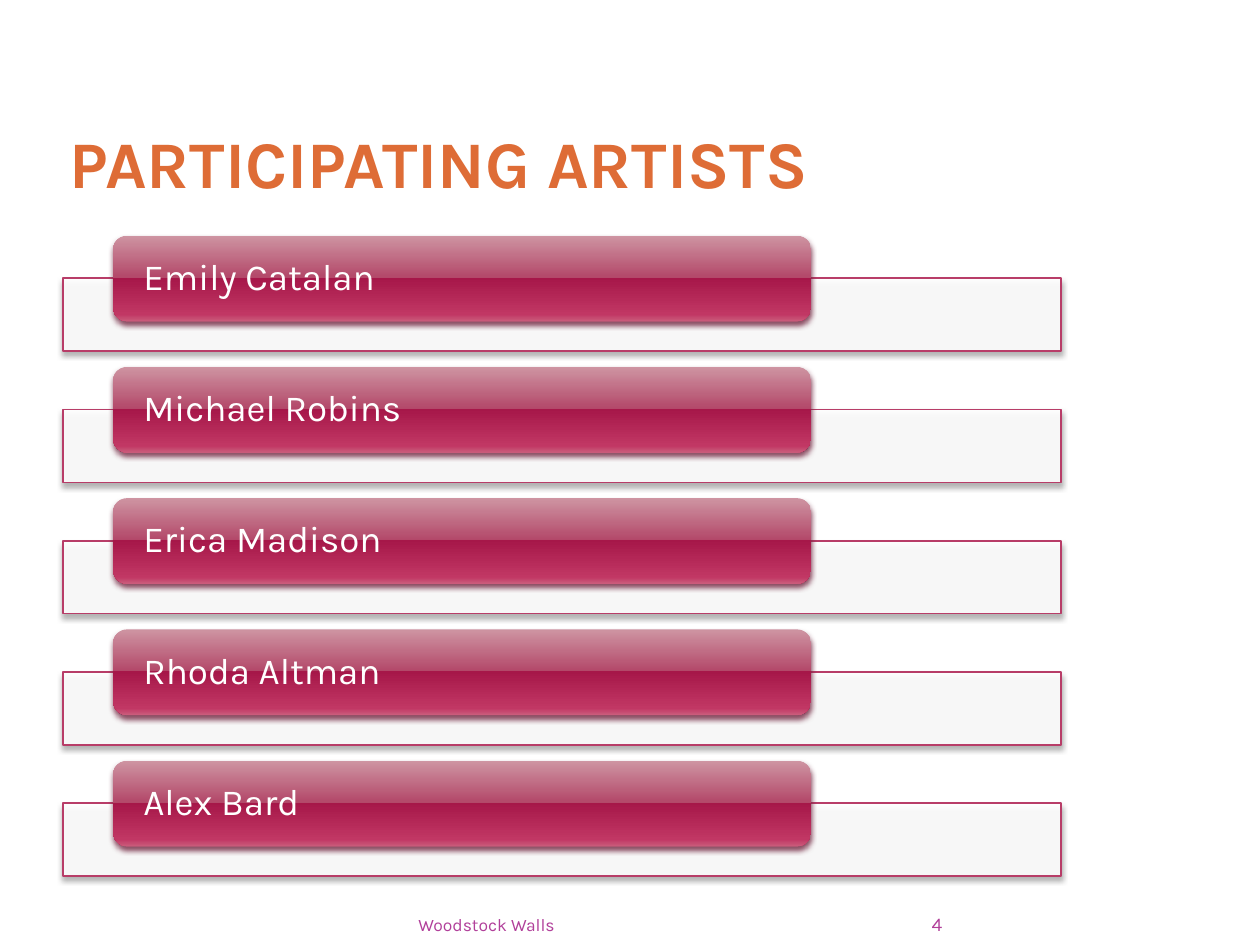
import pptx
import pptx.util
import pptx.dml.color
import pptx.enum.shapes
import pptx.enum.text
import pptx.oxml
import pptx.oxml.ns

Cm, Pt = pptx.util.Cm, pptx.util.Pt
MSO_SHAPE = pptx.enum.shapes.MSO_SHAPE
ANCHOR = pptx.enum.text.MSO_ANCHOR
ALIGN = pptx.enum.text.PP_ALIGN

FONT = "Karla"
COLORS = {
    "title": "DE6C36",
    "bar": "FFFFFF",
    "border": "B83D68",
    "bar_shadow": "9D9D9D",
    "pill_shadow": "722640",
    "name": "FFFFFF",
    "footer": "B13F9A",
}
PILL_STOPS = [(0, "CE94A2"), (49, "B34869"), (49, "A61749"), (92, "C13764"), (100, "CA5D7C")]
ARTISTS = ["Emily Catalan", "Michael Robins", "Erica Madison", "Rhoda Altman", "Alex Bard"]


def rgb(name):
    return pptx.dml.color.RGBColor.from_string(COLORS[name])


def color_xml(value, alpha=100):
    return f'<a:srgbClr val="{value}"><a:alpha val="{alpha * 1000}"/></a:srgbClr>'


def element(xml):
    ns = pptx.oxml.ns.nsdecls("a")
    return pptx.oxml.parse_xml(xml.replace(">", f" {ns}>", 1))


def add_shadow(sp, color):
    sp.shadow.inherit = False
    effects = sp._element.spPr.find(pptx.oxml.ns.qn("a:effectLst"))
    effects.append(element(
        f'<a:outerShdw blurRad="{Pt(3.1)}" dist="{Pt(2)}" dir="5400000" rotWithShape="0">'
        f'{color_xml(COLORS[color], 83)}</a:outerShdw>'))


def write(sp, text, size, color, anchor, inset=0, align=ALIGN.LEFT, bold=False):
    tf = sp.text_frame
    tf.word_wrap = True
    tf.auto_size = pptx.enum.text.MSO_AUTO_SIZE.NONE
    tf.vertical_anchor = anchor
    tf.margin_left = tf.margin_right = Cm(inset)
    tf.margin_top = tf.margin_bottom = 0
    p = tf.paragraphs[0]
    p.alignment = align
    r = p.add_run()
    r.text = text
    r.font.name = FONT
    r.font.size = Pt(size)
    r.font.bold = bold
    r.font.color.rgb = rgb(color)
    return p


def add_title(s, x, y, w, h):
    sp = s.shapes.title
    sp.left, sp.top, sp.width, sp.height = Cm(x), Cm(y), Cm(w), Cm(h)
    write(sp, "PARTICIPATING ARTISTS", 38, "title", ANCHOR.BOTTOM, 0.13, bold=True)


def add_bar(s, x, y, w, h):
    sp = s.shapes.add_shape(MSO_SHAPE.RECTANGLE, Cm(x), Cm(y), Cm(w), Cm(h))
    sp.fill.solid()
    sp.fill.fore_color.rgb = rgb("bar")
    fill = sp._element.spPr.find(pptx.oxml.ns.qn("a:solidFill"))
    fill[0].append(element('<a:alpha val="90000"></a:alpha>'))
    sp.line.color.rgb = rgb("border")
    sp.line.width = Pt(0.9)
    add_shadow(sp, "bar_shadow")


def add_pill(s, x, y, w, h):
    sp = s.shapes.add_shape(MSO_SHAPE.ROUNDED_RECTANGLE, Cm(x), Cm(y), Cm(w), Cm(h))
    sp.fill.gradient()
    sp.fill.gradient_angle = 270
    stops = sp._element.spPr.find(".//" + pptx.oxml.ns.qn("a:gsLst"))
    for stop in list(stops):
        stops.remove(stop)
    for pos, value in PILL_STOPS:
        stops.append(element(f'<a:gs pos="{pos * 1000}">{color_xml(value)}</a:gs>'))
    sp.line.fill.background()
    add_shadow(sp, "pill_shadow")


def add_artist(s, name, x, y, w):
    pill_x, pill_w, pill_h, pad = x + 1.01, 14.07, 1.73, 0.08
    add_bar(s, x, y + 0.86, w, 1.47)
    add_pill(s, pill_x, y, pill_w, pill_h)
    sp = s.shapes.add_textbox(Cm(pill_x + pad), Cm(y + pad),
                              Cm(pill_w - 2 * pad), Cm(pill_h - 2 * pad))
    p = write(sp, name, 21, "name", ANCHOR.MIDDLE, 0.53)
    p.line_spacing = 0.9


def add_artists(s, x, y, w, h):
    pitch = h / len(ARTISTS)
    for i, name in enumerate(ARTISTS):
        add_artist(s, name, x, y + i * pitch, w)


def add_footer(s, x, y, w, h):
    number_w = 1.63
    parts = [("Woodstock Walls", 10, x, 10.16, 0.25),
             ("4", 11, x + w - number_w, number_w, 0)]
    for text, size, left, width, inset in parts:
        sp = s.shapes.add_textbox(Cm(left), Cm(y), Cm(width), Cm(h))
        write(sp, text, size, "footer", ANCHOR.BOTTOM, inset, ALIGN.RIGHT)


def main():
    prs = pptx.Presentation()
    prs.slide_width, prs.slide_height = Cm(25.4), Cm(19.05)
    s = prs.slides.add_slide(prs.slide_layouts[5])
    add_title(s, 1.27, 0.89, 20.12, 3.18)
    add_artists(s, 1.27, 4.75, 20.12, 13.23)
    add_footer(s, 1.27, 18.21, 17.73, 0.64)
    prs.save("out.pptx")


if __name__ == "__main__":
    main()
